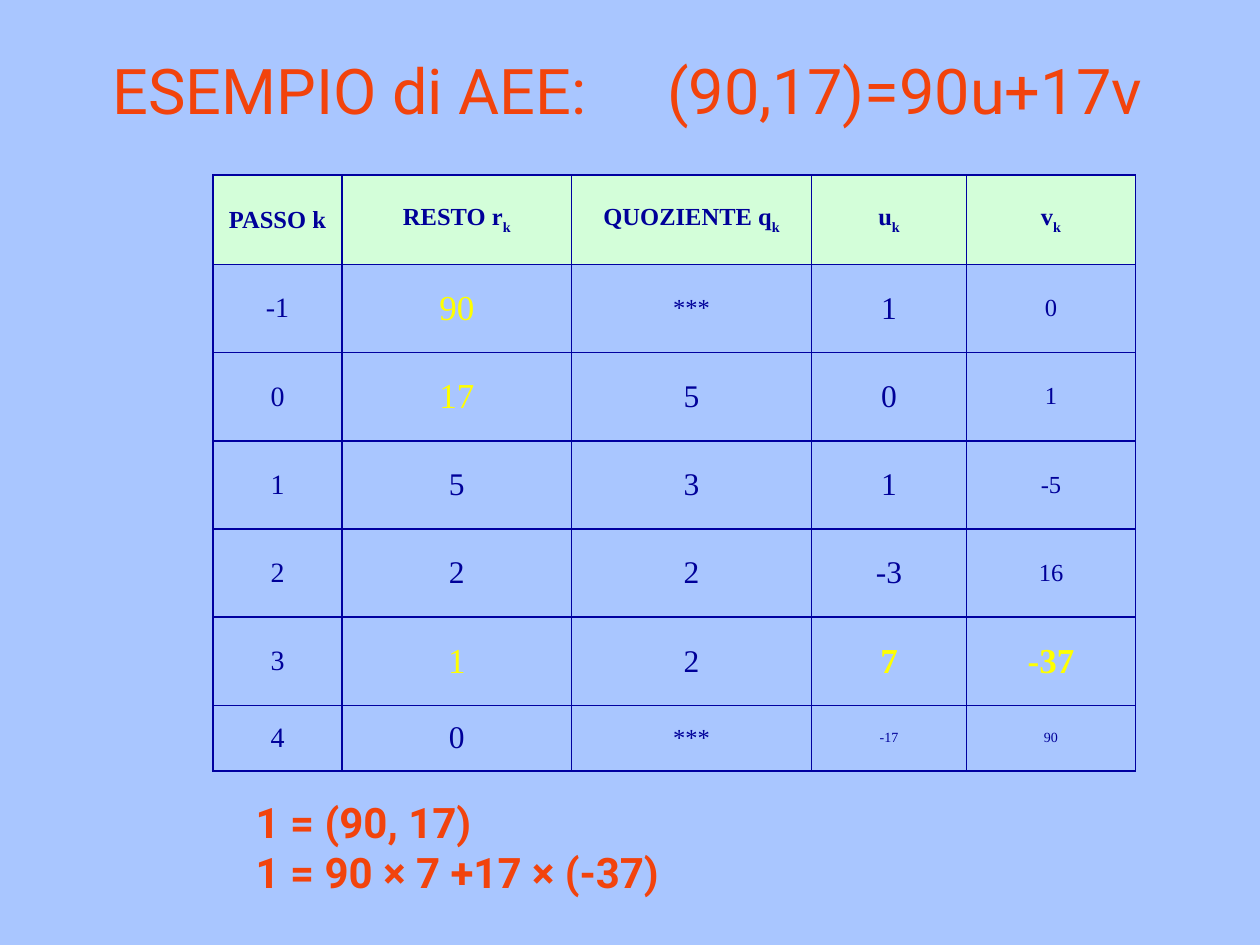
from lxml import etree
from pptx import Presentation
from pptx.dml.color import RGBColor
from pptx.enum import text
from pptx.oxml import ns
from pptx.util import Pt

BACKGROUND = RGBColor(0xA9, 0xC6, 0xFF)
HEADER_FILL = RGBColor(0xD3, 0xFE, 0xD9)
NAVY = RGBColor(0x00, 0x00, 0x99)
YELLOW = RGBColor(0xFF, 0xFF, 0x00)
ORANGE = RGBColor(0xF2, 0x43, 0x0C)
BORDER = RGBColor(0x00, 0x00, 0xA0)

TITLE = "ESEMPIO di AEE:\t(90,17)=90u+17v"
RESULTS = ["1 = (90, 17)", "1 = 90 × 7 +17 × (-37)"]
HEADERS = [("PASSO k", ""), ("RESTO r", "k"), ("QUOZIENTE q", "k"), ("u", "k"), ("v", "k")]
STEPS = [
    ("-1", "90", "***", "1", "0"),
    ("0", "17", "5", "0", "1"),
    ("1", "5", "3", "1", "-5"),
    ("2", "2", "2", "-3", "16"),
    ("3", "1", "2", "7", "-37"),
    ("4", "0", "***", "-17", "90"),
]
COLUMN_WIDTHS = [73.8, 131.2, 137.1, 88.6, 96.5]
ROW_HEIGHTS = [51] + [50.4] * 5 + [37.4]
COLUMN_SIZES = [16, 18, 18, 18, 14]

KEY_VALUE = {"size": Pt(20), "color": YELLOW}
KEY_COEFFICIENT = {**KEY_VALUE, "bold": True}
SMALL = {"size": Pt(8)}
NO_QUOTIENT = {"size": Pt(14)}
SPECIAL = {
    (0, 1): KEY_VALUE, (1, 1): KEY_VALUE, (4, 1): KEY_VALUE,
    (4, 3): KEY_COEFFICIENT, (4, 4): KEY_COEFFICIENT,
    (0, 2): NO_QUOTIENT, (5, 2): NO_QUOTIENT,
    (5, 3): SMALL, (5, 4): SMALL,
}
TABLE_FONT = {"name": "Times New Roman", "color": NAVY, "bold": False}
HEADER_FONT = {**TABLE_FONT, "size": Pt(14), "bold": True}
TITLE_FONT = {"name": "Roboto", "color": ORANGE, "size": Pt(36), "bold": False}
RESULT_FONT = {**TITLE_FONT, "size": Pt(24), "bold": True}


def add_run(paragraph, content, font_format):
    run = paragraph.add_run()
    run.text = content
    for name, value in font_format.items():
        if name == "color":
            run.font.color.rgb = value
        else:
            setattr(run.font, name, value)
    return run


def add_text(slide, box, lines, font_format, frame_format):
    frame = slide.shapes.add_textbox(*map(Pt, box)).text_frame
    for name, value in frame_format.items():
        setattr(frame, name, value)
    for index, line in enumerate(lines):
        paragraph = frame.add_paragraph() if index else frame.paragraphs[0]
        add_run(paragraph, line, font_format)
    return frame


def add_tab_stop(paragraph, position):
    tabs = etree.SubElement(paragraph._p.get_or_add_pPr(), ns.qn("a:tabLst"))
    etree.SubElement(tabs, ns.qn("a:tab"), pos=str(Pt(position)), algn="l")


def add_borders(cell):
    properties = cell._tc.get_or_add_tcPr()
    for side in ("lnL", "lnR", "lnT", "lnB"):
        line = etree.SubElement(properties, ns.qn(f"a:{side}"), w=str(Pt(1)))
        fill = etree.SubElement(line, ns.qn("a:solidFill"))
        etree.SubElement(fill, ns.qn("a:srgbClr"), val=str(BORDER))


def prepare_cell(cell):
    add_borders(cell)
    cell.vertical_anchor = text.MSO_ANCHOR.MIDDLE
    paragraph = cell.text_frame.paragraphs[0]
    paragraph.alignment = text.PP_ALIGN.CENTER
    return paragraph


def add_steps_table(slide):
    size = (sum(COLUMN_WIDTHS), sum(ROW_HEIGHTS))
    table = slide.shapes.add_table(
        len(ROW_HEIGHTS), len(COLUMN_WIDTHS), Pt(121.7), Pt(100.1), *map(Pt, size)).table
    table.first_row = table.horz_banding = False
    for column, width in zip(table.columns, COLUMN_WIDTHS):
        column.width = Pt(width)
    for row, height in zip(table.rows, ROW_HEIGHTS):
        row.height = Pt(height)
    for column, (label, subscript) in enumerate(HEADERS):
        cell = table.cell(0, column)
        paragraph = prepare_cell(cell)
        cell.fill.solid()
        cell.fill.fore_color.rgb = HEADER_FILL
        add_run(paragraph, label, HEADER_FONT)
        if subscript:
            run = add_run(paragraph, subscript, HEADER_FONT)
            run.font._element.set("baseline", "-30000")
    for row, values in enumerate(STEPS):
        for column, value in enumerate(values):
            cell = table.cell(row + 1, column)
            paragraph = prepare_cell(cell)
            cell.fill.background()
            special = SPECIAL.get((row, column), {})
            add_run(paragraph, value, {**TABLE_FONT, "size": Pt(COLUMN_SIZES[column]), **special})


def main():
    presentation = Presentation()
    presentation.slide_width, presentation.slide_height = Pt(720), Pt(540)
    slide = presentation.slides.add_slide(presentation.slide_layouts[6])
    slide.background.fill.solid()
    slide.background.fill.fore_color.rgb = BACKGROUND
    add_steps_table(slide)
    add_text(slide, (139, 451.4, 303, 64.8), RESULTS, RESULT_FONT,
             {"word_wrap": False, "vertical_anchor": text.MSO_ANCHOR.MIDDLE})
    title = add_text(slide, (19.4, 25.9, 680.4, 50.4), [TITLE], TITLE_FONT,
                     {"word_wrap": True, "margin_left": Pt(45)})
    add_tab_stop(title.paragraphs[0], 317)
    presentation.save("out.pptx")


if __name__ == "__main__":
    main()
